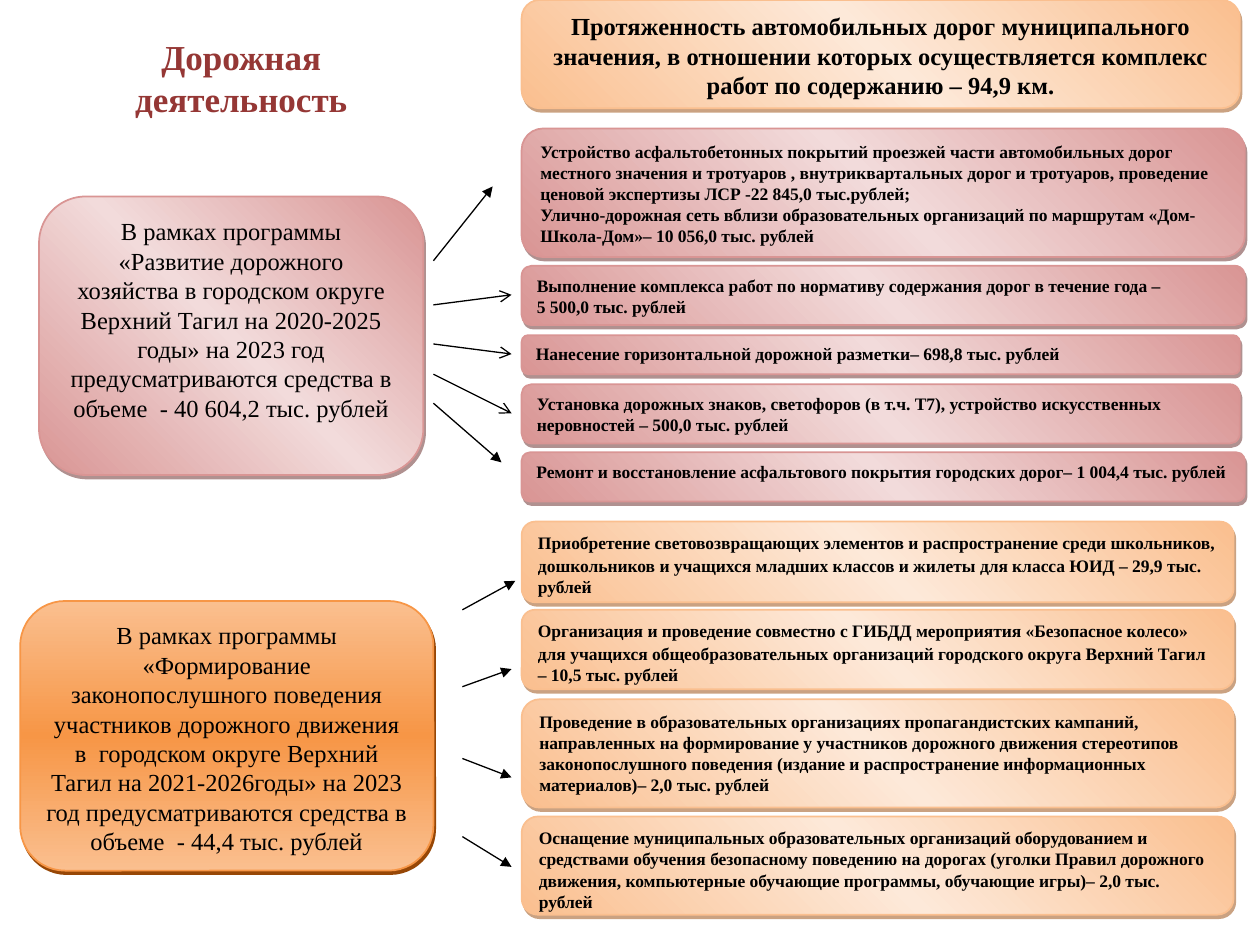
from lxml import etree
from pptx import Presentation
from pptx.dml.color import RGBColor
from pptx.enum.shapes import MSO_CONNECTOR as CONN, MSO_SHAPE as SHAPE
from pptx.enum.text import MSO_ANCHOR as ANCHOR, MSO_AUTO_SIZE as AUTO, PP_ALIGN as ALIGN
from pptx.oxml import parse_xml
from pptx.oxml.ns import nsdecls, qn
from pptx.util import Inches, Pt

BLACK = RGBColor(0x00, 0x00, 0x00)
MAROON = RGBColor(0x95, 0x37, 0x35)
PEACH, CREAM = RGBColor(0xFA, 0xBF, 0x8F), RGBColor(0xFD, 0xE9, 0xD9)
ROSE, BLUSH = RGBColor(0xD9, 0x95, 0x94), RGBColor(0xF2, 0xDB, 0xDB)
ORANGE = RGBColor(0xF7, 0x96, 0x46)
BROWN, WINE = RGBColor(0x97, 0x47, 0x06), RGBColor(0x62, 0x24, 0x23)
SERIF = "Times New Roman"

# Looks: edge and middle of the gradient, its angle, outline, shadow, shadow opacity
PINK_LOOK = dict(edge=ROSE, mid=BLUSH, angle=315, outline=ROSE, shade=WINE, alpha=50)
PEACH_LOOK = dict(edge=PEACH, mid=CREAM, angle=315, outline=PEACH, shade=BROWN, alpha=50)
ORANGE_LOOK = dict(edge=PEACH, mid=ORANGE, angle=90, outline=ORANGE, shade=BROWN, alpha=100)

# Text formats
TITLE = dict(name=SERIF, size=Pt(20), bold=True, color=MAROON)
HEAD = dict(name=SERIF, size=Pt(14), bold=True, color=BLACK)
PROGRAM = dict(HEAD, bold=False)
ITEM = dict(HEAD, size=Pt(10))
SPACER = dict(name="Calibri", size=Pt(11), bold=False, color=BLACK)

# Content: a box's text is a list of paragraphs; "|" marks a spacer, "\n" a line break
HEADER = ["Протяженность автомобильных дорог муниципального значения, в отношении которых "
          "осуществляется комплекс работ по содержанию – 94,9 км."]
ROADS = ["В рамках программы «Развитие дорожного хозяйства в городском округе Верхний Тагил "
         "на 2020-2025 годы» на 2023 год предусматриваются средства в объеме  - 40 604,2 тыс. рублей"]
SAFETY = ["В рамках программы «Формирование законопослушного поведения участников дорожного "
          "движения в  городском округе Верхний Тагил на 2021-2026годы» на 2023 год "
          "предусматриваются средства в объеме  - 44,4 тыс. рублей"]

# Items: top, width, height, text
ROAD_ITEMS = [
    (1.02, 5.74, 1.02, [
        "Устройство асфальтобетонных покрытий проезжей части автомобильных дорог местного значения "
        "и тротуаров , внутриквартальных дорог и тротуаров, проведение ценовой экспертизы ЛСР "
        "-22 845,0 тыс.рублей;",
        "Улично-дорожная сеть вблизи образовательных организаций по маршрутам «Дом-Школа-Дом»"
        "– 10 056,0 тыс. рублей"]),
    (2.11, 5.74, 0.47, ["Выполнение комплекса работ по нормативу содержания дорог в течение года –\n"
                        "5 500,0 тыс. рублей"]),
    (2.66, 5.7, 0.31, ["Нанесение горизонтальной дорожной разметки– 698,8 тыс. рублей"]),
    (3.05, 5.7, 0.47, ["Установка дорожных знаков, светофоров (в т.ч. Т7), устройство искусственных "
                       "неровностей – 500,0 тыс. рублей"]),
    (3.59, 5.74, 0.39, ["Ремонт и восстановление асфальтового покрытия городских дорог"
                        "– 1 004,4 тыс. рублей"]),
]
SAFETY_ITEMS = [
    (4.14, 5.65, 0.64, ["Приобретение световозвращающих элементов и распространение среди школьников, "
                        "дошкольников и учащихся младших классов и жилеты для|класса ЮИД – 29,9 тыс. рублей"]),
    (4.84, 5.65, 0.63, ["Организация и проведение совместно с ГИБДД мероприятия «Безопасное колесо» для "
                        "учащихся общеобразовательных организаций городского|округа Верхний|"
                        "Тагил – 10,5 тыс. рублей"]),
    (5.55, 5.65, 0.86, ["Проведение в образовательных организациях пропагандистских кампаний, направленных "
                        "на формирование у участников дорожного движения стереотипов законопослушного "
                        "поведения (издание и распространение информационных материалов)– 2,0 тыс. рублей"]),
    (6.48, 5.65, 0.78, ["Оснащение муниципальных образовательных организаций оборудованием и средствами "
                        "обучения безопасному поведению на дорогах (уголки Правил дорожного движения, "
                        "компьютерные обучающие программы, обучающие игры)– 2,0 тыс. рублей"]),
]
ITEM_LEFT = 4.14

# Arrows: start column, then start y, end x, end y, head
ARROWS = [
    (3.44, [(2.07, 3.91, 1.48, "triangle"), (2.42, 4.06, 2.34, "arrow"), (2.73, 4.06, 2.81, "arrow"),
            (2.97, 4.06, 3.28, "arrow"), (3.2, 3.98, 3.67, "triangle")]),
    (3.67, [(4.84, 4.09, 4.61, "triangle"), (5.45, 4.06, 5.31, "triangle"),
            (6.02, 4.06, 6.17, "triangle"), (6.64, 4.06, 6.88, "triangle")]),
]


def style(font, fmt):
    for key, value in fmt.items():
        if key == "color":
            font.color.rgb = value
        else:
            setattr(font, key, value)


def add_run(p, text, fmt):
    r = p.add_run()
    r.text = text
    style(r.font, fmt)


def write(tf, paragraphs, fmt, align, after=0):
    for i, text in enumerate(paragraphs):
        p = tf.paragraphs[0] if i == 0 else tf.add_paragraph()
        p.alignment, p.space_after = align, Pt(after)
        for j, line in enumerate(text.split("\n")):
            if j:
                p.add_line_break()
            for k, piece in enumerate(line.split("|")):
                if k:
                    add_run(p, " ", SPACER)
                add_run(p, piece, fmt)


def paint(sp, look):
    stops = "".join(f'<a:gs pos="{pos}"><a:srgbClr val="{color}"/></a:gs>' for pos, color in
                    ((0, look["edge"]), (50000, look["mid"]), (100000, look["edge"])))
    gradient = parse_xml(f'<a:gradFill {nsdecls("a")} rotWithShape="1"><a:gsLst>{stops}</a:gsLst>'
                         f'<a:lin ang="{look["angle"] * 60000}" scaled="1"/></a:gradFill>')
    shadow = parse_xml(f'<a:outerShdw {nsdecls("a")} dist="28400" dir="3806000" algn="ctr" rotWithShape="0">'
                       f'<a:srgbClr val="{look["shade"]}"><a:alpha val="{look["alpha"] * 1000}"/>'
                       '</a:srgbClr></a:outerShdw>')
    sp.line.color.rgb, sp.line.width = look["outline"], Pt(1)
    sp.shadow.inherit = False
    props = sp._element.spPr
    props.find(qn("a:prstGeom")).addnext(gradient)
    props.find(qn("a:effectLst")).append(shadow)


def add_box(slide, box, look, paragraphs, fmt, align):
    sp = slide.shapes.add_shape(SHAPE.ROUNDED_RECTANGLE, *map(Inches, box))
    paint(sp, look)
    tf = sp.text_frame
    tf.word_wrap, tf.vertical_anchor = True, ANCHOR.TOP
    write(tf, paragraphs, fmt, align, 10 if len(paragraphs) == 1 else 0)


def add_arrow(slide, start, end, head):
    c = slide.shapes.add_connector(CONN.STRAIGHT, *map(Inches, start + end))
    c.line.color.rgb, c.line.width = BLACK, Pt(0.75)
    etree.SubElement(c.line._get_or_add_ln(), qn("a:tailEnd"), type=head)
    etree.SubElement(c._element.spPr, qn("a:effectLst"))


def main():
    prs = Presentation()
    prs.slide_width, prs.slide_height = Inches(10), Inches(7.5)
    slide = prs.slides.add_slide(prs.slide_layouts[5])

    # Title
    title = slide.shapes.title
    title.left, title.top, title.width, title.height = map(Inches, (0.39, 0.23, 3.05, 0.77))
    tf = title.text_frame
    tf.word_wrap, tf.vertical_anchor, tf.auto_size = True, ANCHOR.MIDDLE, AUTO.SHAPE_TO_FIT_TEXT
    write(tf, ["Дорожная деятельность"], TITLE, ALIGN.CENTER)

    # Header and the two programmes
    for box, look, text, fmt in (
            ((ITEM_LEFT, 0, 5.7, 0.86), PEACH_LOOK, HEADER, HEAD),
            ((0.31, 1.56, 3.05, 2.21), PINK_LOOK, ROADS, PROGRAM),
            ((0.16, 4.77, 3.28, 2.14), ORANGE_LOOK, SAFETY, PROGRAM)):
        add_box(slide, box, look, text, fmt, ALIGN.CENTER)

    # Items of each programme
    for items, look in ((ROAD_ITEMS, PINK_LOOK), (SAFETY_ITEMS, PEACH_LOOK)):
        for top, width, height, text in items:
            add_box(slide, (ITEM_LEFT, top, width, height), look, text, ITEM, ALIGN.LEFT)

    # Arrows from programmes to items
    for x, arrows in ARROWS:
        for y, end_x, end_y, head in arrows:
            add_arrow(slide, (x, y), (end_x, end_y), head)

    prs.save("out.pptx")


if __name__ == "__main__":
    main()
